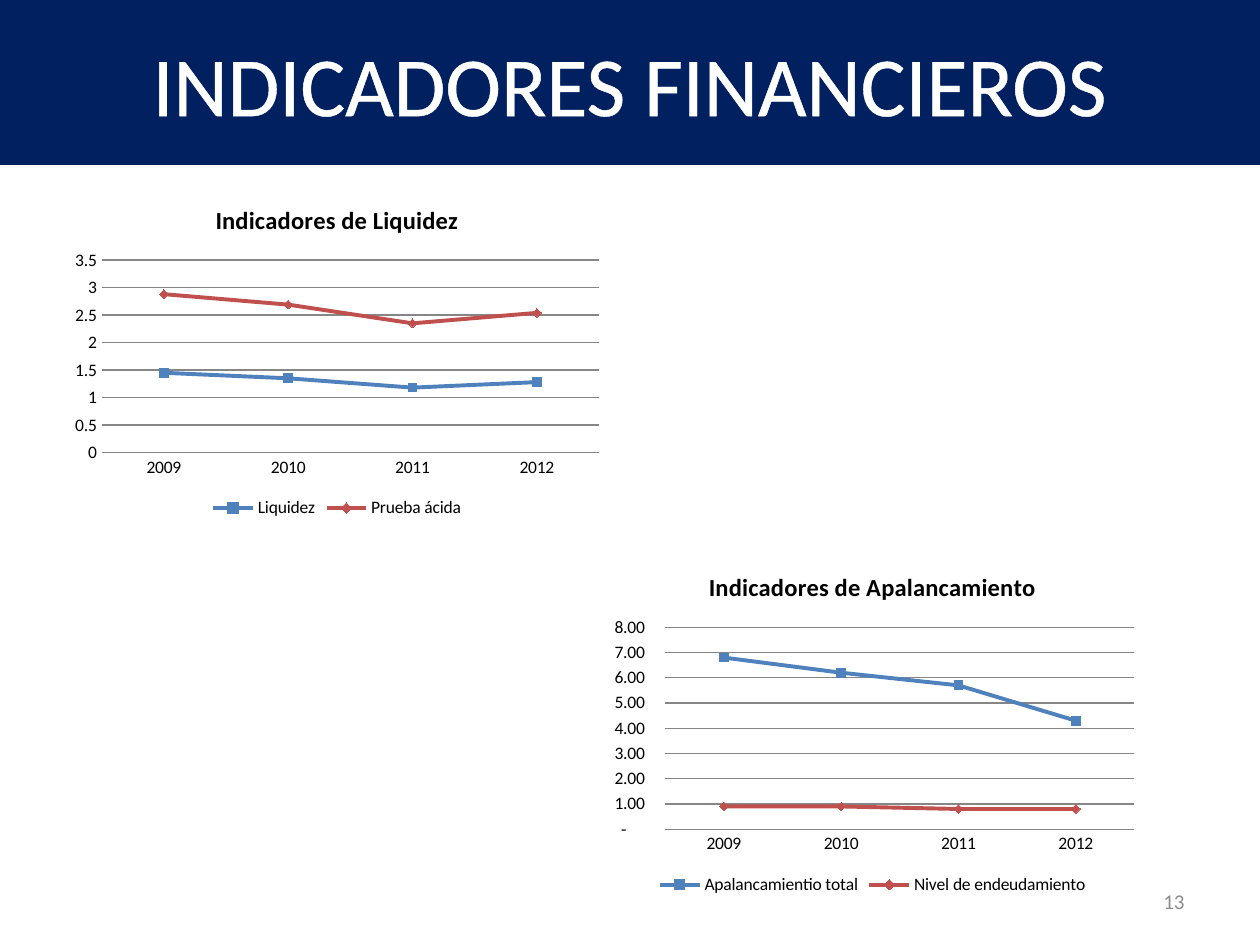
import pptx
import pptx.chart.data
import pptx.dml.color
import pptx.enum.chart
import pptx.enum.shapes
import pptx.enum.text
import pptx.oxml
import pptx.oxml.ns
import pptx.util

Pt = pptx.util.Pt
XL = pptx.enum.chart
ALIGN = pptx.enum.text.PP_ALIGN
FONT = "Calibri"
COLORS = {
    "navy": "002060", "white": "FFFFFF", "black": "000000", "gray": "8C8C8C",
    "grid": "868686", "blue": "4F81BD", "red": "C0504D",
}
YEARS = ["2009", "2010", "2011", "2012"]
ACCOUNTING = r'_-* #,##0.00\ _€_-;\-* #,##0.00\ _€_-;_-* "-"??\ _€_-;_-@_-'
SERIES_STYLES = [
    ("blue", XL.XL_MARKER_STYLE.SQUARE),
    ("red", XL.XL_MARKER_STYLE.DIAMOND),
]


def rgb(name):
    return pptx.dml.color.RGBColor.from_string(COLORS[name])


class SlideBuilder:
    def __init__(self, slide):
        self.slide = slide

    def style_font(self, font, size, color, bold=False):
        font.name = FONT
        font.size = Pt(size)
        font.bold = bold
        font.color.rgb = rgb(color)

    def set_text(self, sp, text, size, color, align):
        tf = sp.text_frame
        tf.word_wrap = True
        tf.vertical_anchor = pptx.enum.text.MSO_ANCHOR.MIDDLE
        p = tf.paragraphs[0]
        p.alignment = align
        r = p.add_run()
        r.text = text
        self.style_font(p.font, size, color)
        return r

    def banner(self, text, box):
        sp = self.slide.shapes.add_shape(
            pptx.enum.shapes.MSO_SHAPE.RECTANGLE, *map(Pt, box))
        sp.shadow.inherit = False
        sp.fill.solid()
        sp.fill.fore_color.rgb = rgb("navy")
        sp.line.fill.background()
        r = self.set_text(sp, text, 48, "white", ALIGN.CENTER)
        outline = pptx.oxml.parse_xml(
            f'<a:ln {pptx.oxml.ns.nsdecls("a")} w="{Pt(1.45)}"><a:solidFill>'
            f'<a:srgbClr val="{COLORS["white"]}"/></a:solidFill></a:ln>')
        r._r.get_or_add_rPr().insert(0, outline)

    def page_number(self, text, box):
        sp = self.slide.shapes.add_textbox(*map(Pt, box))
        self.set_text(sp, text, 12, "gray", ALIGN.RIGHT)

    def line_chart(self, title, kind, series, box, number_format="General"):
        data = pptx.chart.data.CategoryChartData(number_format=number_format)
        data.categories = YEARS
        for name, values in series:
            data.add_series(name, values)
        chart = self.slide.shapes.add_chart(kind, *map(Pt, box), data).chart
        self.style_font(chart.font, 10, "black")

        chart.has_title = True
        tf = chart.chart_title.text_frame
        tf.text = title
        self.style_font(tf.paragraphs[0].font, 14, "black", bold=True)
        chart.chart_title.include_in_layout = False

        chart.has_legend = True
        chart.legend.position = XL.XL_LEGEND_POSITION.BOTTOM
        chart.legend.include_in_layout = False

        for axis in (chart.category_axis, chart.value_axis):
            axis.major_tick_mark = XL.XL_TICK_MARK.NONE
            axis.minor_tick_mark = XL.XL_TICK_MARK.NONE
        value_axis = chart.value_axis
        value_axis.has_major_gridlines = True
        value_axis.format.line.fill.background()
        value_axis.tick_labels.number_format = number_format
        value_axis.tick_labels.number_format_is_linked = False
        for line in (chart.category_axis.format.line,
                     value_axis.major_gridlines.format.line):
            line.color.rgb = rgb("grid")
            line.width = Pt(0.75)

        plot = chart.plots[0]
        plot.vary_by_categories = False
        for ser, (color, marker) in zip(plot.series, SERIES_STYLES):
            ser.smooth = False
            ser.format.line.color.rgb = rgb(color)
            ser.format.line.width = Pt(2.25)
            ser.marker.style = marker
            ser.marker.size = 5
            ser.marker.format.fill.solid()
            ser.marker.format.fill.fore_color.rgb = rgb(color)
            ser.marker.format.line.color.rgb = rgb(color)


def main():
    prs = pptx.Presentation()
    prs.slide_width, prs.slide_height = Pt(720), Pt(540)
    s = SlideBuilder(prs.slides.add_slide(prs.slide_layouts[6]))
    s.banner("INDICADORES FINANCIEROS", (0, 0, 720, 94.3))
    s.page_number("13", (516, 500.5, 168, 28.75))
    s.line_chart(
        "Indicadores de Liquidez", XL.XL_CHART_TYPE.LINE_MARKERS_STACKED,
        [("Liquidez", (1.45, 1.35, 1.18, 1.28)),
         ("Prueba ácida", (1.43, 1.34, 1.17, 1.26))],
        (36.7, 105.8, 311.8, 193))
    s.line_chart(
        "Indicadores de Apalancamiento", XL.XL_CHART_TYPE.LINE_MARKERS,
        [("Apalancamientio total", (6.8, 6.2, 5.7, 4.3)),
         ("Nivel de endeudamiento", (0.9, 0.9, 0.8, 0.8))],
        (342.7, 315.4, 311.8, 198.7), ACCOUNTING)
    prs.save("out.pptx")


if __name__ == "__main__":
    main()
